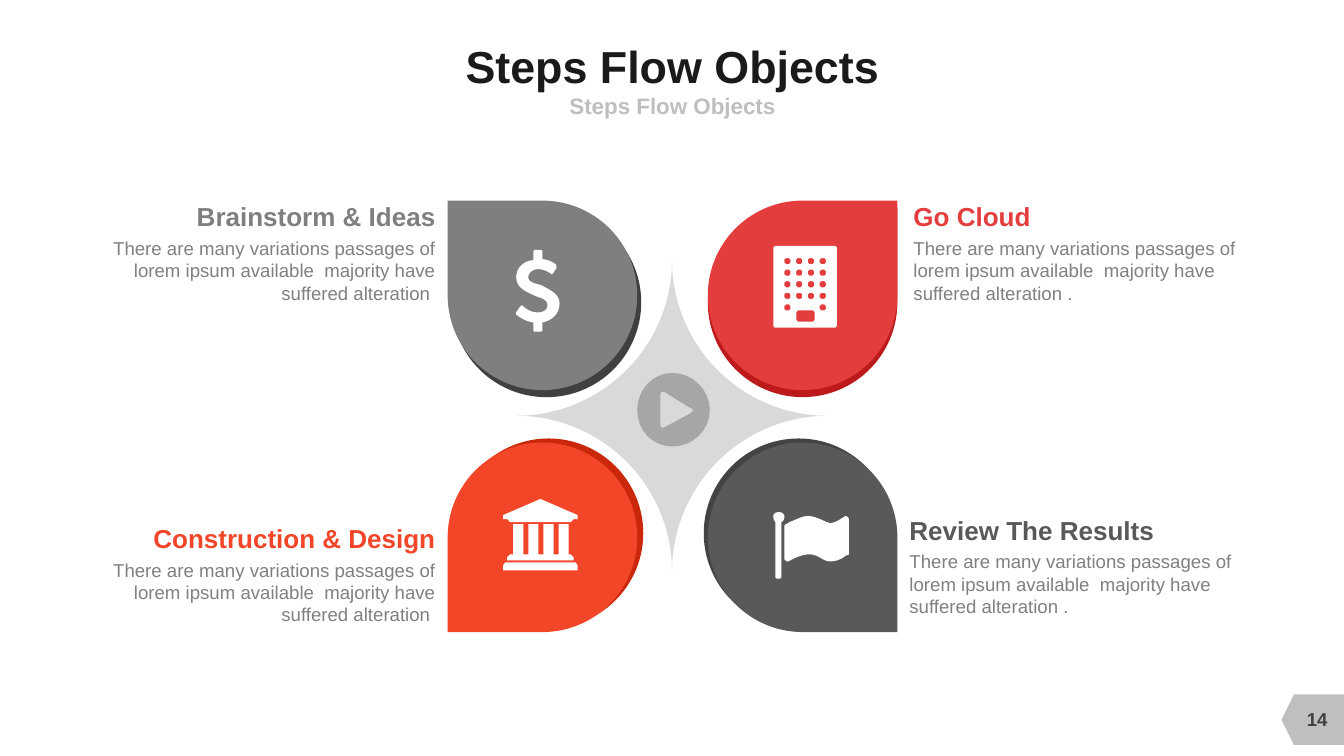
from pptx import Presentation
from pptx import util as u
from pptx.dml.color import RGBColor
from pptx.enum import shapes, text

WHITE = RGBColor(0xFF, 0xFF, 0xFF)
INK = RGBColor(0x1A, 0x1A, 0x1A)
BODY_GRAY = RGBColor(0x80, 0x80, 0x80)
SILVER = RGBColor(0xBF, 0xBF, 0xBF)
STAR_GRAY = RGBColor(0xD9, 0xD9, 0xD9)
PLAY_GRAY = RGBColor(0xA6, 0xA6, 0xA6)
GRAY, GRAY_SHADE = RGBColor(0x7F, 0x7F, 0x7F), RGBColor(0x40, 0x40, 0x40)
RED, RED_SHADE = RGBColor(0xE3, 0x3D, 0x3D), RGBColor(0xBD, 0x1B, 0x1B)
ORANGE, ORANGE_SHADE = RGBColor(0xF3, 0x46, 0x29), RGBColor(0xCA, 0x27, 0x0B)
COAL, COAL_SHADE = RGBColor(0x59, 0x59, 0x59), RGBColor(0x43, 0x43, 0x43)
LEFT, CENTER, RIGHT = text.PP_ALIGN.LEFT, text.PP_ALIGN.CENTER, text.PP_ALIGN.RIGHT
TOP, MIDDLE = text.MSO_ANCHOR.TOP, text.MSO_ANCHOR.MIDDLE

presentation = Presentation()
presentation.slide_width = u.Inches(13.33)
presentation.slide_height = u.Inches(7.5)
slide = presentation.slides.add_slide(presentation.slide_layouts[5])


def add_text(words, box, size, color, bold=True, align=CENTER, anchor=MIDDLE,
             spacing=None, shape=None):
    """Write words in a box (left, top, width, height), or in a given shape moved there."""
    left, top, width, height = map(u.Inches, box)
    if shape is None:
        shape = slide.shapes.add_textbox(left, top, width, height)
    else:
        shape.left, shape.top, shape.width, shape.height = left, top, width, height
    frame = shape.text_frame
    frame.margin_left = frame.margin_right = frame.margin_top = frame.margin_bottom = 0
    frame.word_wrap = True
    frame.auto_size = text.MSO_AUTO_SIZE.NONE
    frame.vertical_anchor = anchor
    paragraph = frame.paragraphs[0]
    paragraph.alignment = align
    paragraph.line_spacing = spacing
    run = paragraph.add_run()
    run.text = words
    run.font.name, run.font.size, run.font.bold = "Arial", u.Pt(size), bold
    run.font.color.rgb = color


def add_icon(contours, color):
    """Fill closed contours; a pair is a corner, six numbers are a Bezier curve."""
    builder = None
    for contour in contours:
        points = [contour[0]]
        for step in contour[1:]:
            if len(step) == 2:
                points.append(step)
                continue
            (x0, y0), (x1, y1, x2, y2, x3, y3) = points[-1], step
            for t in (i / 8 for i in range(1, 9)):
                a, b, c, d = (1 - t) ** 3, 3 * t * (1 - t) ** 2, 3 * t * t * (1 - t), t ** 3
                points.append((a * x0 + b * x1 + c * x2 + d * x3,
                               a * y0 + b * y1 + c * y2 + d * y3))
        points = [(u.Inches(x), u.Inches(y)) for x, y in points]
        if builder is None:
            builder = slide.shapes.build_freeform(*points[0])
        else:
            builder.move_to(*points[0])
        builder.add_line_segments(points[1:], close=True)
    icon = builder.convert_to_shape()
    icon.shadow.inherit = False
    icon.fill.solid()
    icon.fill.fore_color.rgb = color
    icon.line.fill.background()


add_text("Steps Flow Objects", (2.56, 0.39, 8.22, 0.52), 32, INK, shape=slide.shapes.title)
add_text("Steps Flow Objects", (3.67, 0.9, 6, 0.29), 16, SILVER)

# Page tag, central star and the four petals, each petal over its darker shade
PETAL = 1.88
WEST, EAST, NORTH, SOUTH = 4.44, 7.02, 1.99, 4.39
KIND = shapes.MSO_SHAPE
flat_shapes = [
    (KIND.FLOWCHART_OFFPAGE_CONNECTOR, 12.77, 6.83, 0.5, 0.62, 90, SILVER),
    (KIND.PLAQUE, 5.12, 2.58, 3.09, 3.09, 0, STAR_GRAY),
]
for column, row, shade_dx, shade_dy, turn, color, shade in [
    (WEST, NORTH, 0.04, 0.07, 270, GRAY, GRAY_SHADE),
    (EAST, NORTH, 0, 0.07, 0, RED, RED_SHADE),
    (WEST, SOUTH, 0.06, -0.04, 180, ORANGE, ORANGE_SHADE),
    (EAST, SOUTH, -0.04, -0.04, 90, COAL, COAL_SHADE),
]:
    flat_shapes += [
        (KIND.TEAR, column + shade_dx, row + shade_dy, PETAL, PETAL, turn, shade),
        (KIND.TEAR, column, row, PETAL, PETAL, turn, color),
    ]
for kind, left, top, width, height, turn, color in flat_shapes:
    shape = slide.shapes.add_shape(kind, *map(u.Inches, (left, top, width, height)))
    shape.rotation = turn
    shape.shadow.inherit = False
    shape.fill.solid()
    shape.fill.fore_color.rgb = color
    shape.line.fill.background()
    if kind == KIND.PLAQUE:
        shape.adjustments[0] = 0.5
add_text("14", (12.73, 6.93, 0.67, 0.4), 13.3, GRAY_SHADE)

# Captions beside the petals
PASSAGE = "There are many variations passages of lorem ipsum available  majority have suffered alteration "
CAPTION_WIDTH = 3.32
for heading, ending, left, top, align, color in [
    ("Brainstorm & Ideas", "", 1, 1.99, RIGHT, GRAY),
    ("Go Cloud", ".", 9.06, 1.99, LEFT, RED),
    ("Construction & Design", "", 1, 5.18, RIGHT, ORANGE),
    ("Review The Results", ".", 9.02, 5.1, LEFT, COAL),
]:
    add_text(heading, (left, top, CAPTION_WIDTH, 0.31), 18.6, color, align=align, anchor=TOP)
    add_text(PASSAGE + ending, (left, top + 0.36, CAPTION_WIDTH, 0.67), 13.3, BODY_GRAY,
             bold=False, align=align, anchor=TOP)

play_disc = [(7.04, 4.07), (7.04, 4.27, 6.87, 4.43, 6.67, 4.43),
             (6.47, 4.43, 6.32, 4.27, 6.32, 4.07), (6.32, 3.87, 6.47, 3.7, 6.67, 3.7),
             (6.87, 3.7, 7.04, 3.87, 7.04, 4.07)]
play_arrow = [(6.87, 4.07), (6.87, 4.06, 6.87, 4.05, 6.85, 4.05), (6.59, 3.89),
              (6.57, 3.88, 6.55, 3.89, 6.55, 3.91), (6.55, 4.22),
              (6.55, 4.24, 6.57, 4.25, 6.59, 4.24), (6.85, 4.1),
              (6.87, 4.08, 6.87, 4.08, 6.87, 4.07)]
add_icon([play_disc, play_arrow], PLAY_GRAY)

dollar = [(5.38, 3.2), (5.38, 3.28), (5.37, 3.29), (5.3, 3.29), (5.29, 3.28), (5.29, 3.2),
          (5.18, 3.18, 5.12, 3.12, 5.12, 3.12), (5.12, 3.1), (5.16, 3.04), (5.18, 3.03),
          (5.19, 3.04, 5.25, 3.1, 5.33, 3.1), (5.38, 3.1, 5.43, 3.08, 5.43, 3.03),
          (5.43, 2.97, 5.37, 2.96, 5.32, 2.94), (5.23, 2.9, 5.12, 2.86, 5.12, 2.75),
          (5.12, 2.66, 5.19, 2.59, 5.29, 2.58), (5.29, 2.49), (5.3, 2.48), (5.37, 2.48),
          (5.38, 2.49), (5.38, 2.57), (5.47, 2.58, 5.52, 2.63, 5.52, 2.63), (5.52, 2.66),
          (5.48, 2.72), (5.47, 2.72), (5.47, 2.72, 5.41, 2.67, 5.34, 2.67),
          (5.28, 2.67, 5.24, 2.71, 5.24, 2.75), (5.24, 2.8, 5.3, 2.81, 5.37, 2.83),
          (5.44, 2.87, 5.55, 2.91, 5.55, 3.01), (5.55, 3.12, 5.47, 3.18, 5.38, 3.2)]
add_icon([dollar], WHITE)

bank_roof = [(4.99, 5.11), (5.36, 4.95), (5.73, 5.11), (5.73, 5.15), (5.69, 5.15),
             (5.66, 5.18), (5.06, 5.18), (5.03, 5.15), (4.99, 5.15)]
bank_step = [(5.03, 5.56), (5.03, 5.53), (5.06, 5.5), (5.66, 5.5), (5.69, 5.53), (5.69, 5.56)]
bank_base = [(4.99, 5.66), (4.99, 5.61), (5.01, 5.58), (5.71, 5.58), (5.73, 5.61), (5.73, 5.66)]
bank_columns = [[(x, 5.2), (x + 0.1, 5.2), (x + 0.1, 5.5), (x, 5.5)]
                for x in (5.09 + 0.15 * i for i in range(4))]
add_icon([bank_roof, *bank_columns, bank_step, bank_base], WHITE)

# Office block: wall, door and a 4 by 5 window grid that leaves room for the door
office = [(7.67, 2.44, 8.3, 3.25), (7.9, 3.08, 8.08, 3.19)]
for row in range(5):
    for column in range(4):
        if row < 4 or column in (0, 3):
            x, y = 7.78 + 0.117 * column, 2.56 + 0.115 * row
            office.append((x, y, x + 0.06, y + 0.06))
CUT = 0.015
add_icon([[(l + CUT, t), (r - CUT, t), (r, t + CUT), (r, b - CUT),
           (r - CUT, b), (l + CUT, b), (l, b - CUT), (l, t + CUT)]
          for l, t, r, b in office], WHITE)

flag_pole = [(7.75, 5.18), (7.75, 5.73), (7.74, 5.74), (7.7, 5.74), (7.69, 5.73), (7.69, 5.18),
             (7.68, 5.17, 7.67, 5.15, 7.67, 5.12), (7.67, 5.1, 7.69, 5.08, 7.73, 5.08),
             (7.75, 5.08, 7.78, 5.1, 7.78, 5.12), (7.78, 5.15, 7.77, 5.17, 7.75, 5.18)]
flag_cloth = [(8.42, 5.49), (8.42, 5.5, 8.42, 5.51, 8.39, 5.51),
              (8.35, 5.55, 8.29, 5.57, 8.23, 5.57), (8.16, 5.57, 8.12, 5.5, 8.03, 5.5),
              (7.96, 5.5, 7.89, 5.53, 7.82, 5.57), (7.8, 5.57), (7.78, 5.55), (7.78, 5.23),
              (7.78, 5.22, 7.78, 5.2, 7.8, 5.2), (7.83, 5.18),
              (7.89, 5.16, 7.95, 5.12, 8.01, 5.12), (8.08, 5.12, 8.13, 5.15, 8.2, 5.18),
              (8.23, 5.19), (8.3, 5.19, 8.37, 5.12, 8.39, 5.12), (8.42, 5.13, 8.42, 5.15, 8.42, 5.16)]
add_icon([flag_pole, flag_cloth], WHITE)

presentation.save("out.pptx")
